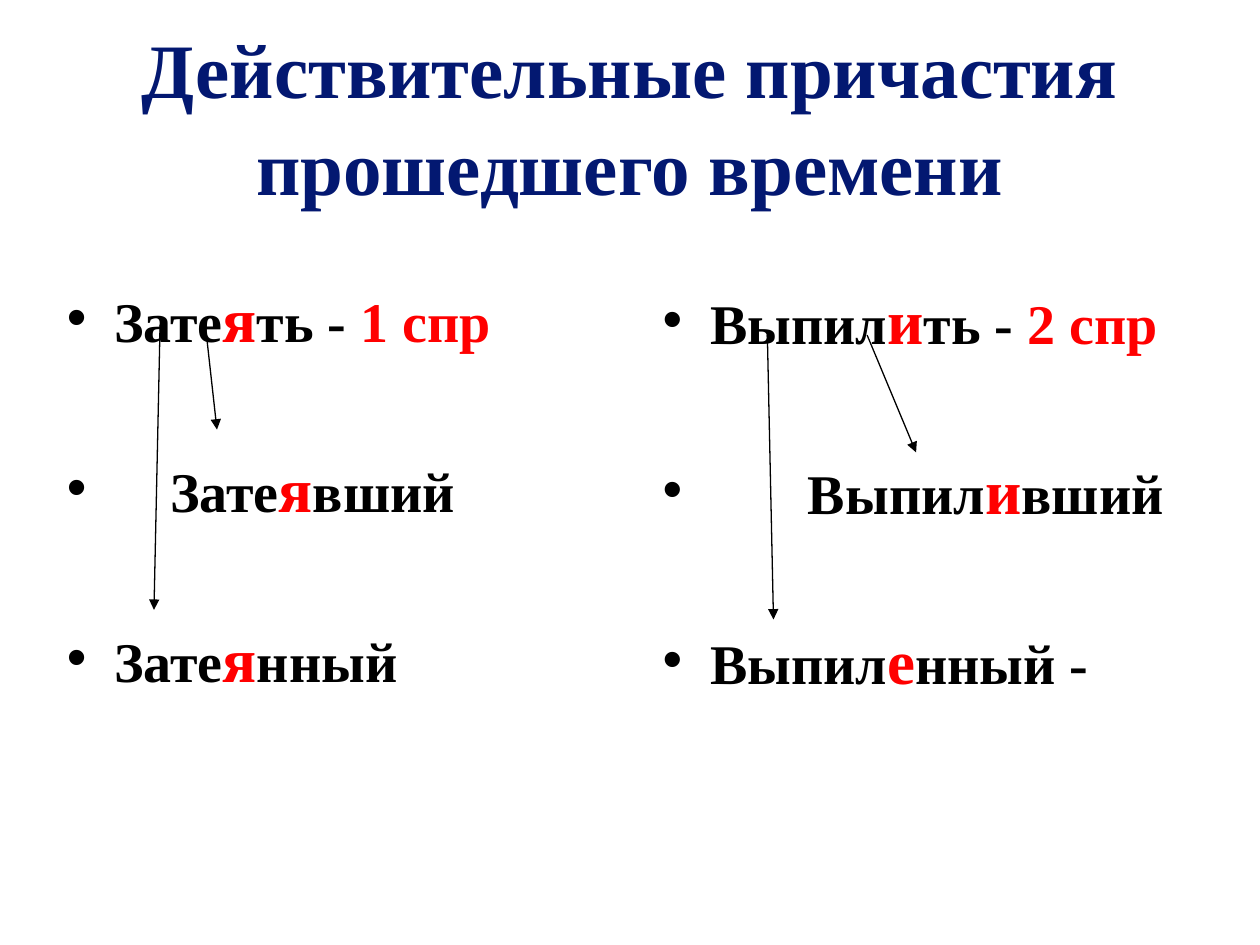
from lxml import etree
from pptx import Presentation
from pptx.dml.color import RGBColor
from pptx.enum.shapes import MSO_CONNECTOR
from pptx.enum.text import MSO_ANCHOR, MSO_AUTO_SIZE, PP_ALIGN
from pptx.oxml.ns import qn
from pptx.util import Pt

STRAIGHT = MSO_CONNECTOR.STRAIGHT
BOTTOM, TOP = MSO_ANCHOR.BOTTOM, MSO_ANCHOR.TOP
NO_FIT = MSO_AUTO_SIZE.NONE
CENTER, LEFT = PP_ALIGN.CENTER, PP_ALIGN.LEFT
NAVY = RGBColor(0x03, 0x18, 0x71)
BLACK = RGBColor(0, 0, 0)
RED = RGBColor(0xFF, 0, 0)

TITLE = {"size": Pt(44), "color": NAVY}
STEM = {"size": Pt(32), "color": BLACK}
VOWEL = {"size": Pt(36), "color": RED}
CLASS = {"size": Pt(32), "color": RED}
HANG = 27

VERBS = [
    {
        "box": (31, 156, 360, 376),
        "words": [
            (0, [("Зате", STEM), ("я", VOWEL), ("ть - ", STEM), ("1 спр", CLASS)]),
            (32, [("Зате", STEM), ("я", VOWEL), ("вший", STEM)]),
            (0, [("Зате", STEM), ("я", VOWEL), ("нный", STEM)]),
        ],
        "arrows": [(87, 35.5, 93, 89.5), (60.5, 29.5, 57, 192.5)],
    },
    {
        "box": (371.5, 157, 315.5, 376),
        "words": [
            (0, [("Выпил", STEM), ("и", VOWEL), ("ть - ", STEM), ("2 спр", CLASS)]),
            (56, [("Выпил", STEM), ("и", VOWEL), ("вший", STEM)]),
            (0, [("Выпил", STEM), ("е", VOWEL), ("нный -", STEM)]),
        ],
        "arrows": [(124, 34.5, 152, 101.5), (67, 34.5, 70.5, 197)],
    },
]


def set_attrs(obj, values):
    for name, value in values.items():
        setattr(obj, name, value)


def place(sp, box):
    set_attrs(sp, dict(zip(("left", "top", "width", "height"), map(Pt, box))))


def add_run(p, text, style):
    r = p.add_run()
    r.text = text
    set_attrs(r.font, {"name": "Times New Roman", "bold": True, "size": style["size"]})
    r.font.color.rgb = style["color"]


def add_title(sp, box, text):
    place(sp, box)
    tf = sp.text_frame
    set_attrs(tf, {"word_wrap": True, "auto_size": NO_FIT, "vertical_anchor": BOTTOM,
                   "margin_left": 0, "margin_right": 0, "margin_bottom": Pt(3.6)})
    p = tf.paragraphs[0]
    set_attrs(p, {"alignment": CENTER, "line_spacing": 1.05})
    add_run(p, text, TITLE)


def add_arrow(s, start, end):
    line = s.shapes.add_connector(STRAIGHT, *map(Pt, start + end))
    line.line.color.rgb = BLACK
    line.line.width = Pt(0.75)
    etree.SubElement(line.line._get_or_add_ln(), qn("a:tailEnd"), type="triangle")
    etree.SubElement(line._element.spPr, qn("a:effectLst"))


def add_verb_column(s, sp, box, words, arrows):
    place(sp, box)
    tf = sp.text_frame
    set_attrs(tf, {"word_wrap": True, "auto_size": NO_FIT, "vertical_anchor": TOP})
    for i, (shift, parts) in enumerate(words):
        p = tf.add_paragraph() if i else tf.paragraphs[0]
        set_attrs(p, {"alignment": LEFT, "space_before": Pt(54 if i else 4)})
        pPr = p._p.get_or_add_pPr()
        pPr.set("marL", str(Pt(HANG + shift)))
        pPr.set("indent", str(-Pt(HANG + shift)))
        etree.SubElement(pPr, qn("a:buChar"), char="•")
        for text, style in parts:
            add_run(p, text, style)
    left, top = box[:2]
    for x1, y1, x2, y2 in arrows:
        add_arrow(s, (left + x1, top + y1), (left + x2, top + y2))


def main():
    prs = Presentation()
    set_attrs(prs, {"slide_width": Pt(720), "slide_height": Pt(540)})
    s = prs.slides.add_slide(prs.slide_layouts[3])
    title, *bodies = s.placeholders
    add_title(title, (72, 62, 576, 62), "Действительные причастия прошедшего времени")
    for sp, verb in zip(bodies, VERBS):
        add_verb_column(s, sp, **verb)
    prs.save("out.pptx")


if __name__ == "__main__":
    main()
